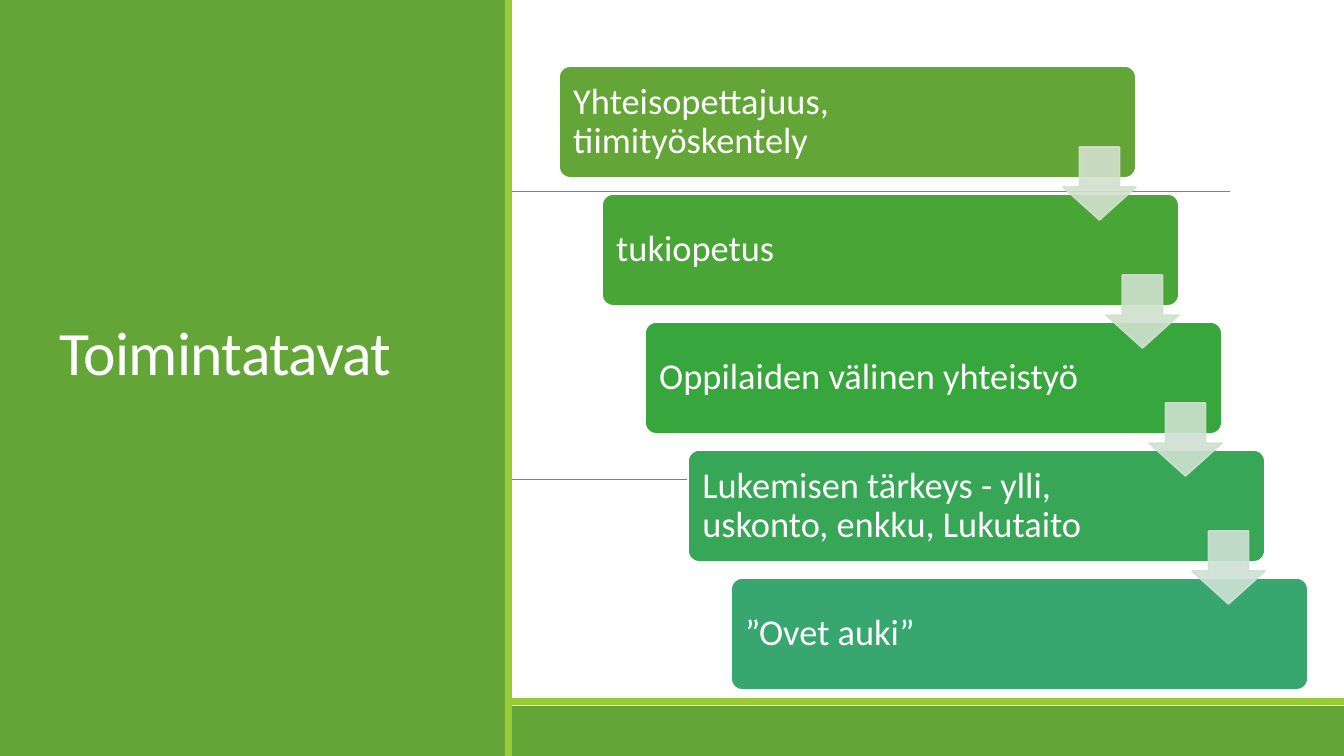
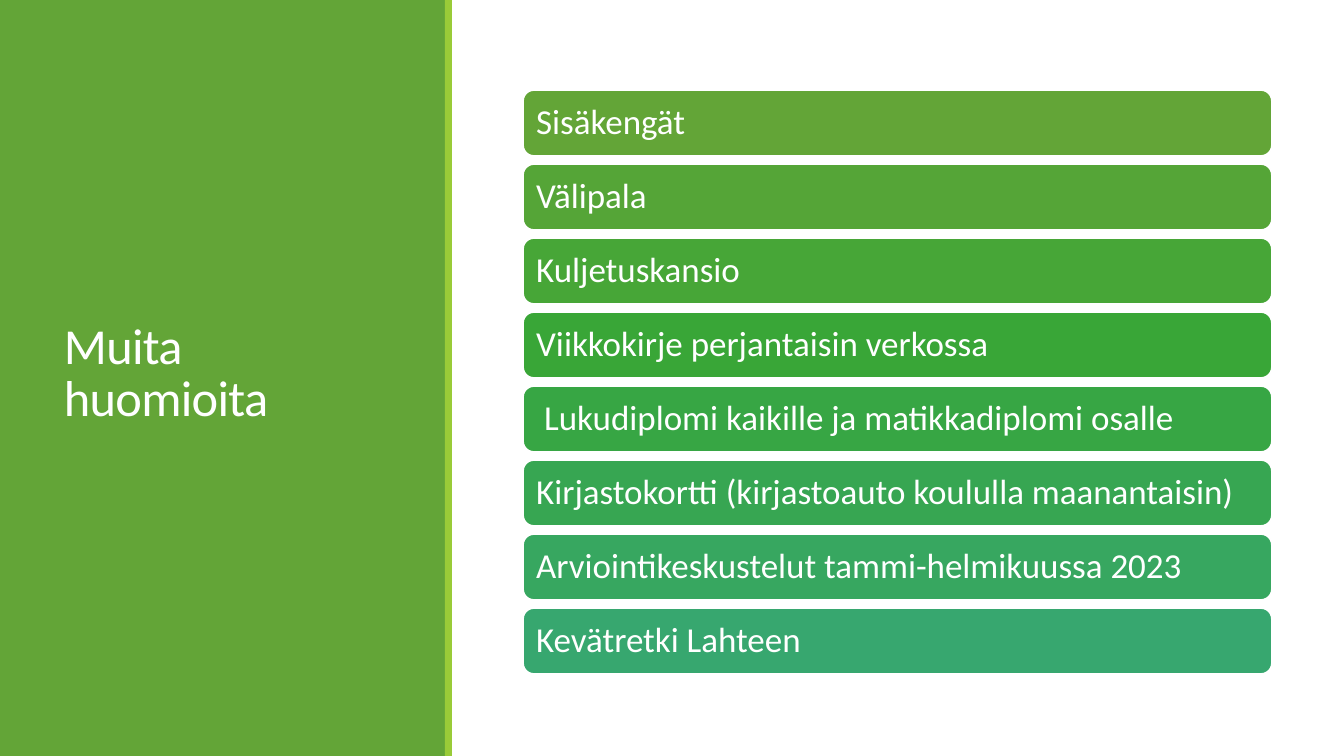
from pptx import Presentation
from pptx.dml.color import RGBColor
from pptx.enum.shapes import MSO_CONNECTOR, MSO_SHAPE
from pptx.enum.text import MSO_ANCHOR, PP_ALIGN
from pptx.oxml.ns import qn
from pptx.util import Pt
from lxml.etree import SubElement

SLIDE_WIDTH, SLIDE_HEIGHT = 1344, 756
EMU_PER_PX = 12192000 / SLIDE_WIDTH
FONT = "Calibri"
COLOURS = {
    "panel": "63A537",
    "accent": "99CB38",
    "white": "FFFFFF",
    "rule": "808080",
}

# Step text, box colour
STEPS = [
    ("Yhteisopettajuus, tiimityöskentely", "63A537"),
    ("tukiopetus", "4AA537"),
    ("Oppilaiden välinen yhteistyö", "37A63D"),
    ("Lukemisen tärkeys - ylli, uskonto, enkku, Lukutaito", "37A656"),
    ("”Ovet auki”", "37A76F"),
]
ARROW_COLOURS = ["D3E1CE", "CFE1CE", "CEE1D1", "CEE1D5"]

# Note text, bar colour, extra indent
NOTES = [
    ("Sisäkengät", "63A537", 0),
    ("Välipala", "55A537", 0),
    ("Kuljetuskansio", "47A637", 0),
    ("Viikkokirje perjantaisin verkossa", "39A637", 0),
    ("Lukudiplomi kaikille ja matikkadiplomi osalle", "37A644", 8),
    ("Kirjastokortti (kirjastoauto koululla maanantaisin)", "37A652", 0),
    ("Arviointikeskustelut tammi-helmikuussa 2023", "37A760", 0),
    ("Kevätretki Lahteen", "37A76F", 0),
]


def emu(*lengths):
    return [round(length * EMU_PER_PX) for length in lengths]


def rgb(colour):
    return RGBColor.from_string(COLOURS.get(colour, colour))


class SlideBuilder:
    def __init__(self):
        self.deck = Presentation()
        self.deck.slide_width, self.deck.slide_height = emu(SLIDE_WIDTH, SLIDE_HEIGHT)
        self.slide = None

    def new_slide(self):
        self.slide = self.deck.slides.add_slide(self.deck.slide_layouts[6])

    def shape(self, kind, place, fill, line=None, adjustments=()):
        shape = self.slide.shapes.add_shape(kind, *emu(*place))
        shape.shadow.inherit = False
        shape.fill.solid()
        shape.fill.fore_color.rgb = rgb(fill)
        if line:
            shape.line.color.rgb = rgb(line)
            shape.line.width = Pt(1.25)
        else:
            shape.line.fill.background()
        for index, value in enumerate(adjustments):
            shape.adjustments[index] = value
        return shape

    def set_text(self, box, text, size, anchor, spacing):
        frame = box.text_frame
        frame.text = text
        frame.word_wrap = True
        frame.vertical_anchor = anchor
        para = frame.paragraphs[0]
        para.alignment = PP_ALIGN.LEFT
        para.line_spacing = spacing
        span = para.runs[0]
        span.font.name = FONT
        span.font.size = Pt(size)
        span.font.color.rgb = rgb("white")
        return span

    def title(self, text, place, size, anchor):
        box = self.slide.shapes.add_textbox(*emu(*place))
        span = self.set_text(box, text, size, anchor, 0.85)
        span._r.get_or_add_rPr().set("spc", "-50")

    def side_panel(self, width):
        self.shape(MSO_SHAPE.RECTANGLE, (0, 0, width, SLIDE_HEIGHT), "panel")
        self.shape(MSO_SHAPE.RECTANGLE, (width, 0, 7, SLIDE_HEIGHT), "accent")

    def footer_band(self):
        self.shape(MSO_SHAPE.RECTANGLE, (0, 706, SLIDE_WIDTH, 50), "panel")
        self.shape(MSO_SHAPE.RECTANGLE, (0, 698, SLIDE_WIDTH, 7), "accent")

    def rule(self, left, right, y):
        rule = self.slide.shapes.add_connector(
            MSO_CONNECTOR.STRAIGHT, *emu(left, y, right, y))
        rule.line.color.rgb = rgb("rule")
        rule.line.width = Pt(0.5)
        SubElement(rule._element.spPr, qn("a:effectLst"))

    def card(self, text, place, fill, size, insets, adjustments=()):
        card = self.shape(MSO_SHAPE.ROUNDED_RECTANGLE, place, fill, "white", adjustments)
        self.set_text(card, text, size, MSO_ANCHOR.MIDDLE, 0.9)
        frame = card.text_frame
        (frame.margin_left, frame.margin_top,
         frame.margin_right, frame.margin_bottom) = emu(*insets)

    def down_arrow(self, place, colour):
        arrow = self.shape(MSO_SHAPE.DOWN_ARROW, place, colour, colour, (0.55, 0.45))
        for tint in arrow._element.spPr.iter(qn("a:srgbClr")):
            SubElement(tint, qn("a:alpha")).set("val", "90000")


def build_working_methods(builder):
    builder.new_slide()
    builder.rule(132, 1230, 191)
    builder.footer_band()
    builder.rule(133, 1222, 479)
    builder.side_panel(505)
    builder.title("Toimintatavat", (50, 71, 454, 322), 44, MSO_ANCHOR.BOTTOM)

    # Staircase of steps, then the arrows that overlap them
    step_x, step_y = 43, 128
    for index, (text, fill) in enumerate(STEPS):
        place = (559 + index * step_x, 66 + index * step_y, 577, 112)
        builder.card(text, place, fill, 26, (11, 11, 126, 11), (0.1,))
    for index, colour in enumerate(ARROW_COLOURS):
        place = (1063 + index * step_x, 147 + index * step_y, 73, 73)
        builder.down_arrow(place, colour)


def build_other_notes(builder):
    builder.new_slide()
    builder.side_panel(445)
    builder.title("Muita huomioita", (54, 57, 340, 636), 36, MSO_ANCHOR.MIDDLE)

    # Evenly spaced bars
    for index, (text, fill, indent) in enumerate(NOTES):
        place = (523, 90 + index * 74, 749, 66)
        builder.card(text, place, fill, 25, (10 + indent, 10, 10, 10))


def main():
    builder = SlideBuilder()
    build_working_methods(builder)
    build_other_notes(builder)
    builder.deck.save("out.pptx")


if __name__ == "__main__":
    main()
